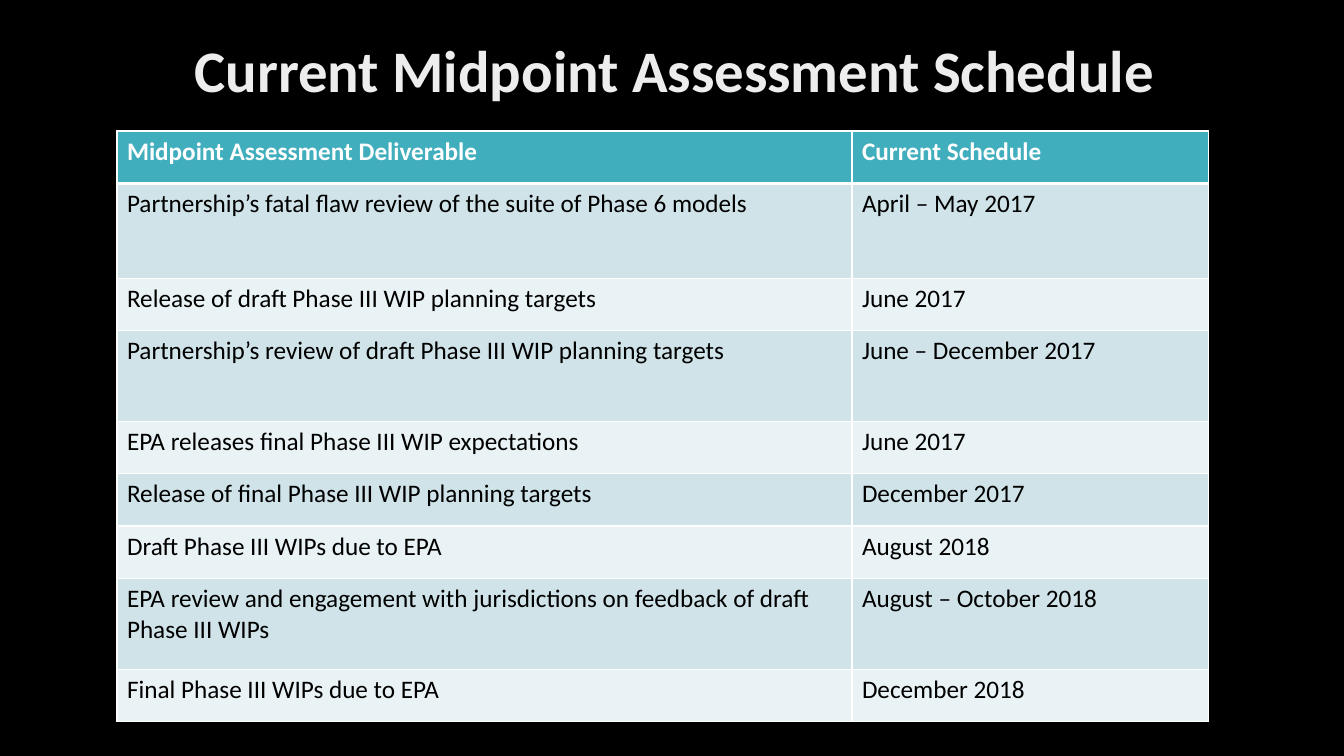
from lxml import etree
from pptx import Presentation
from pptx.dml.color import RGBColor
from pptx.enum import text
from pptx.oxml import ns
from pptx.util import Inches, Pt

BLACK = RGBColor(0x00, 0x00, 0x00)
WHITE = RGBColor(0xFF, 0xFF, 0xFF)
TITLE_GREY = RGBColor(0xED, 0xED, 0xED)
TEAL = RGBColor(0x41, 0xAE, 0xBD)
BANDS = [RGBColor(0xE9, 0xF2, 0xF4), RGBColor(0xCF, 0xE3, 0xE8)]

COLUMN_WIDTHS = [7.29, 3.54]
SCHEDULE = [
    (0.52, "Midpoint Assessment Deliverable", "Current Schedule"),
    (0.94, "Partnership’s fatal flaw review of the suite of Phase 6 models", "April – May 2017"),
    (0.52, "Release of draft Phase III WIP planning targets", "June 2017"),
    (0.9, "Partnership’s review of draft Phase III WIP planning targets", "June – December 2017"),
    (0.52, "EPA releases final Phase III WIP expectations", "June 2017"),
    (0.52, "Release of final Phase III WIP planning targets", "December 2017"),
    (0.52, "Draft Phase III WIPs due to EPA", "August 2018"),
    (0.9, "EPA review and engagement with jurisdictions on feedback of draft Phase III WIPs",
     "August – October 2018"),
    (0.52, "Final Phase III WIPs due to EPA", "December 2018"),
]


def style_font(font, color, **values):
    """Set the typeface, colour and other values of a font."""
    for name, value in {"name": "Calibri", **values}.items():
        setattr(font, name, value)
    font.fill.solid()
    font.fill.fore_color.rgb = color


def add_title(slide, wording):
    """Add the centred heading."""
    frame = slide.shapes.add_textbox(
        Inches(0.18), Inches(0), Inches(13.15), Inches(1.45)).text_frame
    frame.word_wrap = True
    frame.vertical_anchor = text.MSO_ANCHOR.MIDDLE
    heading = frame.paragraphs[0]
    heading.alignment = text.PP_ALIGN.CENTER
    heading.line_spacing = 0.9
    run = heading.add_run()
    run.text = wording
    style_font(run.font, TITLE_GREY, size=Pt(42), bold=True)


def add_borders(cell, widths):
    """Draw white borders of the given point widths by side."""
    properties = cell._tc.get_or_add_tcPr()
    for side, width in widths.items():
        line = etree.SubElement(properties, ns.qn(f"a:ln{side}"), w=str(Pt(width)))
        fill = etree.SubElement(line, ns.qn("a:solidFill"))
        etree.SubElement(fill, ns.qn("a:srgbClr"), val=str(WHITE))


def fill_cell(cell, wording, row):
    """Write and style one cell according to its row."""
    header = row == 0
    add_borders(cell, {"L": 1, "R": 1, "T": 3 if row == 1 else 1, "B": 3 if header else 1})
    cell.fill.solid()
    cell.fill.fore_color.rgb = TEAL if header else BANDS[row % 2]
    run = cell.text_frame.paragraphs[0].add_run()
    run.text = wording
    style_font(run.font, WHITE if header else BLACK, size=Pt(18), bold=header)


def add_schedule(slide):
    """Add the table of deliverables and dates."""
    table = slide.shapes.add_table(
        len(SCHEDULE), len(COLUMN_WIDTHS), Inches(1.16), Inches(1.3),
        Inches(sum(COLUMN_WIDTHS)), Inches(sum(row[0] for row in SCHEDULE))).table
    for column, width in zip(table.columns, COLUMN_WIDTHS):
        column.width = Inches(width)
    for row, (height, *wordings) in enumerate(SCHEDULE):
        table.rows[row].height = Inches(height)
        for column, wording in enumerate(wordings):
            fill_cell(table.cell(row, column), wording, row)


def main():
    """Build and save the schedule slide."""
    deck = Presentation()
    deck.slide_width, deck.slide_height = Inches(13.33), Inches(7.5)
    slide = deck.slides.add_slide(deck.slide_layouts[6])
    slide.background.fill.solid()
    slide.background.fill.fore_color.rgb = BLACK
    add_title(slide, "Current Midpoint Assessment Schedule ")
    add_schedule(slide)
    deck.save("out.pptx")


if __name__ == "__main__":
    main()
